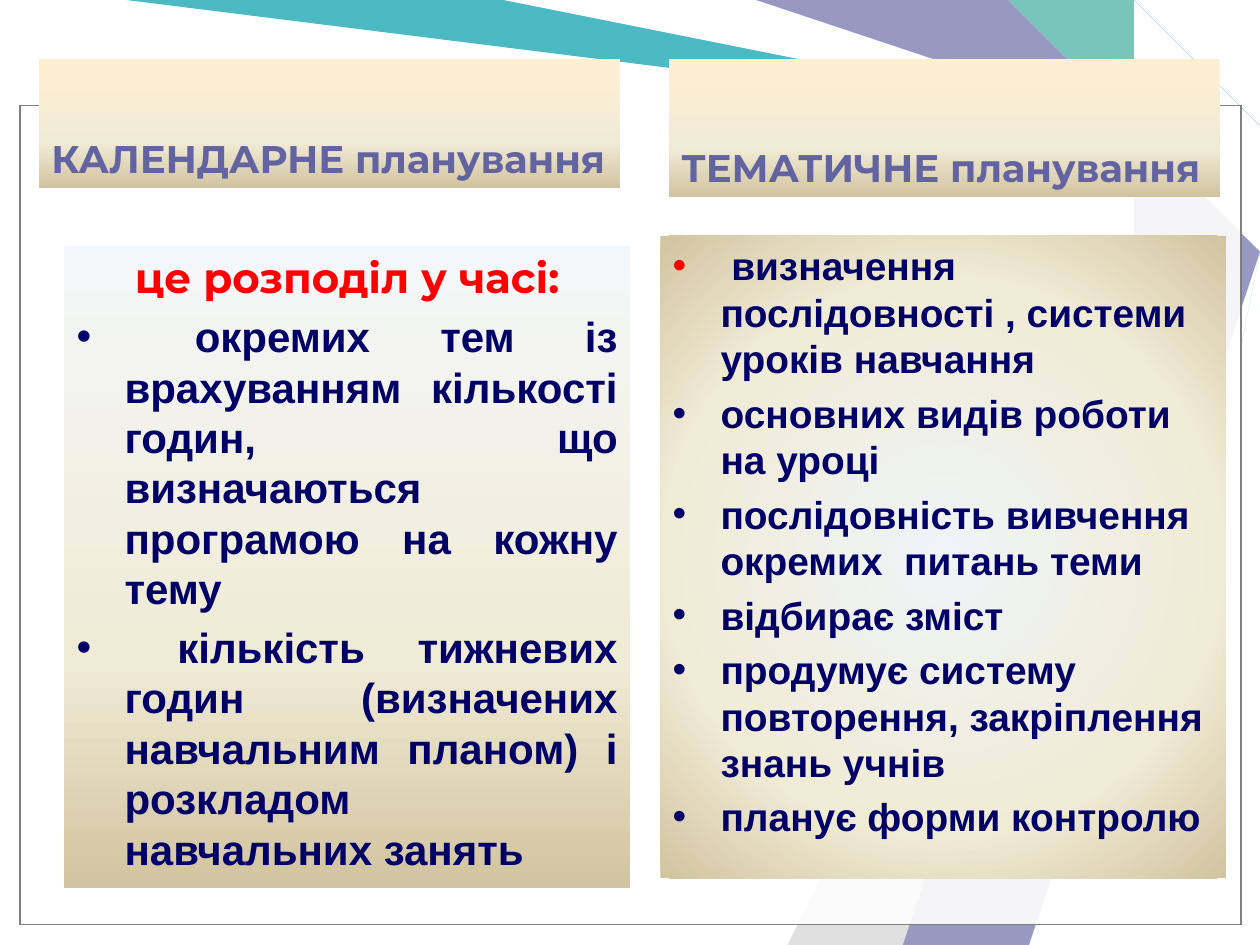
from lxml.etree import SubElement
from pptx import Presentation
from pptx.dml.color import RGBColor
from pptx.enum.shapes import MSO_SHAPE as Shape
from pptx.enum.text import MSO_ANCHOR as Anchor, PP_ALIGN as Align
from pptx.oxml.ns import qn
from pptx.util import Cm, Pt

COLORS = {
    "green": "7AC5B9", "teal": "4BBAC3", "grey": "E0E0E0", "white": "FFFFFF",
    "pale": "D4E1EE", "blue": "2F84AF", "violet": "9899C1", "sky": "719FC5",
    "black": "000000", "frame": "808080", "heading": "6263A0", "red": "FF0000",
    "navy": "000066", "cream": "FFEFD1", "ice": "F4F7FA", "mist": "EFF4F8",
    "sand": "F0EBD5", "tan": "D1C39F",
}
RIBBONS = [
    ("green", [(8.92, 0), (9.29, 0.77), (9.58, 1.67), (9.11, 7.49), (8.56, 7.49),
               (9.5, 1.67), (9.17, 0.75), (8.38, 0)]),
    ("teal", [(1.17, 0), (3.83, 0), (9.14, 0.78), (9.42, 1.69), (7.42, 7.5),
              (6.92, 7.5), (9.35, 1.73), (9.01, 0.91)]),
    ("grey", [(6.67, 7.5), (9.27, 1.81), (6, 7.5)]),
    ("white", [(3.75, 0), (9.1, 0.82), (9.32, 1.62), (6.75, 7.5), (7, 7.5),
               (9.41, 1.58), (9.17, 0.75), (6, 0)]),
    ("pale", [(9.25, 0), (9.17, 0.17), (9.78, 1.2), (10, 1.25), (10, 1),
              (9.25, 0.17), (9.32, 0)]),
    ("blue", [(10, 0.83), (9.42, 0.25), (10, 0.67)]),
    ("violet", [(6.08, 0), (7.92, 0), (9.3, 0.7), (9.66, 1.69), (8.33, 7.5),
                (7.33, 7.5), (9.42, 1.58), (9.17, 0.75)]),
    ("sky", [(7.32, 7.5), (9.32, 1.83), (7.49, 7.5)]),
]
HEADINGS = [
    ((0.31, 0.47, 4.61, 1.02), "КАЛЕНДАРНЕ планування"),
    ((5.31, 0.47, 4.37, 1.09), "ТЕМАТИЧНЕ планування"),
]
CALENDAR_TITLE = "це розподіл у часі:"
CALENDAR_ITEMS = [
    " окремих тем із врахуванням кількості годин, що визначаються програмою на кожну тему",
    " кількість тижневих годин (визначених навчальним планом) і розкладом  навчальних занять",
]
THEMATIC_ITEMS = [
    " визначення послідовності , системи уроків навчання",
    "основних видів роботи на уроці",
    "послідовність вивчення окремих  питань теми",
    "відбирає зміст",
    "продумує систему повторення, закріплення знань учнів",
    "планує форми контролю",
]


def rgb(name):
    return RGBColor.from_string(COLORS[name])


def inch(value):
    return Cm(value * 2.54)


def add_ribbon(page, color, points):
    builder = page.shapes.build_freeform(*points[0], scale=inch(1))
    builder.add_line_segments(points[1:], close=True)
    ribbon = builder.convert_to_shape()
    ribbon.shadow.inherit = False
    ribbon.fill.solid()
    ribbon.fill.fore_color.rgb = rgb(color)
    ribbon.line.fill.background()


def add_box(page, place, line=None):
    box = page.shapes.add_shape(Shape.RECTANGLE, *map(inch, place))
    box.shadow.inherit = False
    box.fill.solid()
    box.fill.fore_color.rgb = rgb("white")
    if line:
        box.line.color.rgb = rgb(line)
        box.line.width = Pt(0.75)
    else:
        box.line.fill.background()
    return box


def add_frame(page, line):
    frame = add_box(page, (0.16, 0.84, 9.69, 6.5), line)
    color = frame._element.spPr.find(qn("a:solidFill"))[0]
    SubElement(color, qn("a:alpha"), val="69000")


def add_panel(page, place, top_color, anchor=Anchor.TOP, radial=False):
    panel = add_box(page, place)
    panel.fill.gradient()
    gradient = panel._element.spPr.find(qn("a:gradFill"))
    for child in list(gradient):
        gradient.remove(child)
    stops = SubElement(gradient, qn("a:gsLst"))
    for position, name in ((0, top_color), (65, "sand"), (100, "tan")):
        stop = SubElement(stops, qn("a:gs"), pos=str(position * 1000))
        SubElement(stop, qn("a:srgbClr"), val=COLORS[name])
    if radial:
        shade = SubElement(gradient, qn("a:path"), path="circle")
        SubElement(shade, qn("a:fillToRect"), l="50000", t="50000", r="50000", b="50000")
    else:
        SubElement(gradient, qn("a:lin"), ang="5400000", scaled="1")
    frame = panel.text_frame
    frame.word_wrap = True
    frame.vertical_anchor = anchor
    return frame


def add_para(frame, text, size, color, font="Arial", align=Align.LEFT,
             bullet=None, hanging=False, before=0):
    para = frame.paragraphs[0]
    if para.runs:
        para = frame.add_paragraph()
        para.space_before = Pt(before)
    para.alignment = align
    props = para._p.get_or_add_pPr()
    if hanging:
        props.set("marL", str(inch(0.38)))
        props.set("indent", str(-inch(0.38)))
    if bullet:
        tint = SubElement(props, qn("a:buClr"))
        SubElement(tint, qn("a:srgbClr"), val=COLORS[bullet])
        SubElement(props, qn("a:buFont"), typeface="Arial")
        SubElement(props, qn("a:buChar"), char="•")
    span = para.add_run()
    span.text = text
    for key, value in {"size": Pt(size), "name": font, "bold": True}.items():
        setattr(span.font, key, value)
    span.font.color.rgb = rgb(color)


def main():
    deck = Presentation()
    deck.slide_width, deck.slide_height = inch(10), inch(7.5)
    page = deck.slides.add_slide(deck.slide_layouts[6])
    for color, points in RIBBONS:
        add_ribbon(page, color, points)
    for line in ("black", "frame"):
        add_frame(page, line)
    add_box(page, (0.42, 0.74, 6.83, 0.17))

    for place, text in HEADINGS:
        heading = add_panel(page, place, "cream", Anchor.BOTTOM)
        add_para(heading, text, 22, "heading", "Montserrat")

    calendar = add_panel(page, (0.51, 1.95, 4.49, 5.1), "ice")
    add_para(calendar, CALENDAR_TITLE, 24, "red", "Montserrat", Align.CENTER, hanging=True)
    for text in CALENDAR_ITEMS:
        add_para(calendar, text, 24, "navy", align=Align.JUSTIFY, bullet="navy",
                 hanging=True, before=4.8)

    thematic = add_panel(page, (5.24, 1.87, 4.49, 5.1), "mist", radial=True)
    for index, text in enumerate(THEMATIC_ITEMS):
        add_para(thematic, text, 22.2, "navy", bullet="navy" if index else "red",
                 hanging=True, before=4.4)

    deck.save("out.pptx")


if __name__ == "__main__":
    main()
